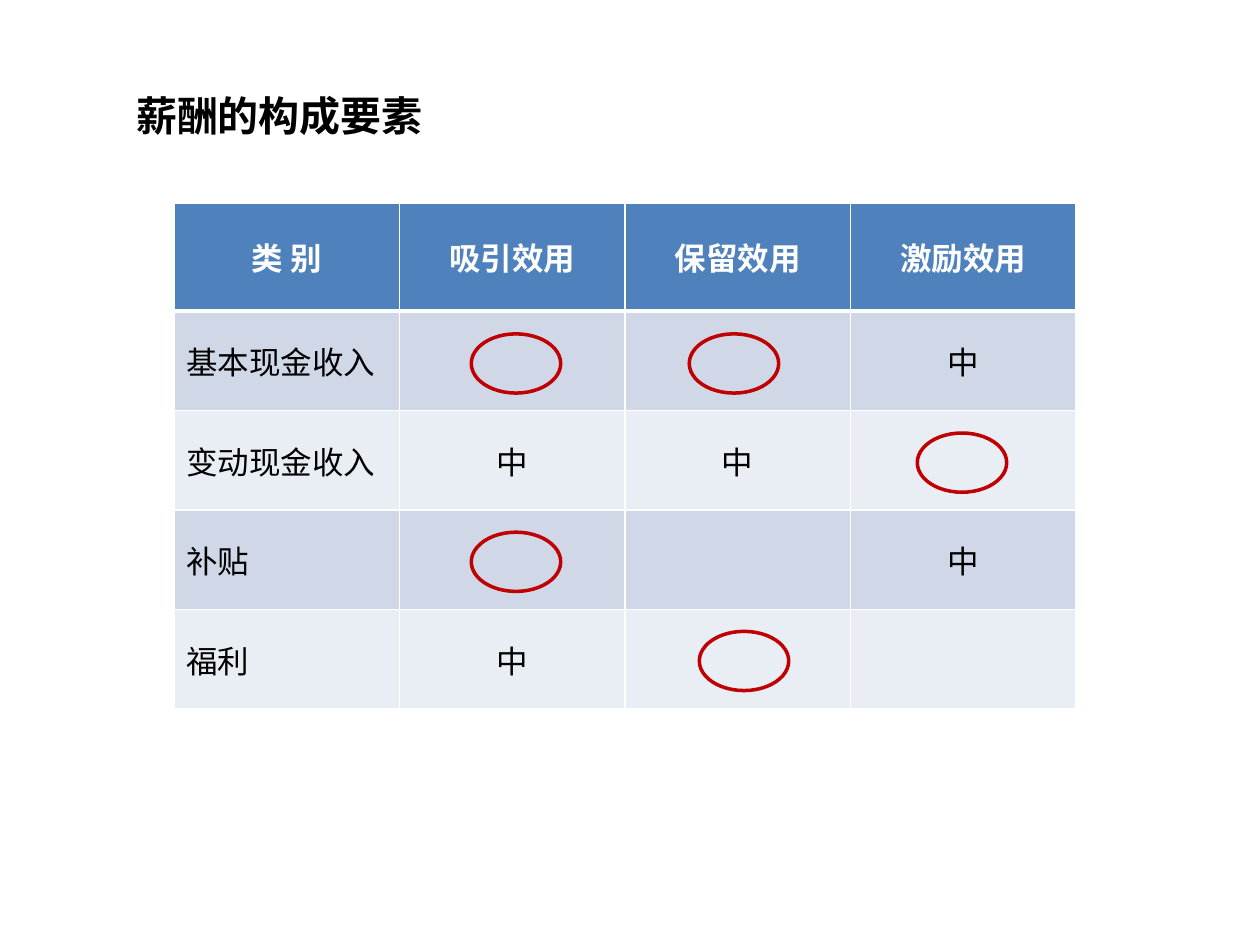
from dataclasses import dataclass

from lxml import etree
from pptx import Presentation
from pptx.dml.color import RGBColor
from pptx.enum import shapes, text
from pptx.oxml import ns
from pptx.util import Inches, Pt

FONT = "Noto Sans CJK SC"
BLACK = RGBColor(0x00, 0x00, 0x00)
WHITE = RGBColor(0xFF, 0xFF, 0xFF)
RED = RGBColor(0xC0, 0x00, 0x00)
HEADER = RGBColor(0x4F, 0x81, 0xBD)
BANDS = (RGBColor(0xD0, 0xD8, 0xE8), RGBColor(0xE9, 0xED, 0xF4))
LEFT, CENTER = text.PP_ALIGN.LEFT, text.PP_ALIGN.CENTER

ROWS = [
    ("类 别", "吸引效用", "保留效用", "激励效用"),
    ("基本现金收入", "", "", "中"),
    ("变动现金收入", "中", "中", ""),
    ("补贴", "", "", "中"),
    ("福利", "中", "", ""),
]
COLUMN_WIDTH = 1.79
HEADER_HEIGHT, ROW_HEIGHT = 0.86, 0.79


@dataclass(frozen=True)
class Mark:
    left: float
    row: int


MARKS = [Mark(3.74, 0), Mark(5.47, 0), Mark(7.28, 1), Mark(3.74, 2), Mark(5.55, 3)]


def write(tf, content: str, *, size: float = 18, color=BLACK,
          bold: bool = False, align=LEFT) -> None:
    tf.vertical_anchor = text.MSO_ANCHOR.MIDDLE
    p = tf.paragraphs[0]
    p.alignment = align
    r = p.add_run()
    r.text = content
    r.font.name = FONT
    r.font.size = Pt(size)
    r.font.bold = bold
    r.font.color.rgb = color
    etree.SubElement(r._r.get_or_add_rPr(), ns.qn("a:ea"), typeface=FONT)


def set_borders(cell, **widths: float) -> None:
    tc_pr = cell._tc.get_or_add_tcPr()
    for side, width in widths.items():
        line = etree.SubElement(tc_pr, ns.qn(f"a:ln{side}"), w=str(Pt(width)))
        fill = etree.SubElement(line, ns.qn("a:solidFill"))
        etree.SubElement(fill, ns.qn("a:srgbClr"), val=str(WHITE))


def add_effect_table(s) -> None:
    height = HEADER_HEIGHT + ROW_HEIGHT * (len(ROWS) - 1)
    columns = len(ROWS[0])
    table = s.shapes.add_table(len(ROWS), columns, Inches(1.38), Inches(1.61),
                               Inches(COLUMN_WIDTH * columns), Inches(height)).table
    for column in table.columns:
        column.width = Inches(COLUMN_WIDTH)
    for i, values in enumerate(ROWS):
        is_header = i == 0
        table.rows[i].height = Inches(HEADER_HEIGHT if is_header else ROW_HEIGHT)
        for j, value in enumerate(values):
            cell = table.cell(i, j)
            set_borders(cell, L=1, R=1, T=3 if i == 1 else 1, B=3 if is_header else 1)
            cell.fill.solid()
            cell.fill.fore_color.rgb = HEADER if is_header else BANDS[(i - 1) % 2]
            cell.vertical_anchor = text.MSO_ANCHOR.MIDDLE
            if value:
                write(cell.text_frame, value, bold=is_header,
                      color=WHITE if is_header else BLACK,
                      align=CENTER if is_header or j else LEFT)


def add_mark(s, mark: Mark) -> None:
    sp = s.shapes.add_shape(shapes.MSO_SHAPE.OVAL, Inches(mark.left),
                            Inches(2.65 + 0.787 * mark.row), Inches(0.71), Inches(0.47))
    sp.shadow.inherit = False
    sp.fill.background()
    sp.line.color.rgb = RED
    sp.line.width = Pt(2)


def main() -> None:
    prs = Presentation()
    prs.slide_width, prs.slide_height = Inches(10), Inches(7.5)
    s = prs.slides.add_slide(prs.slide_layouts[5])
    title = s.shapes.title
    title.left, title.top = Inches(0.98), Inches(0.29)
    title.width, title.height = Inches(8), Inches(1.25)
    write(title.text_frame, "薪酬的构成要素", size=23.4, bold=True)
    add_effect_table(s)
    for mark in MARKS:
        add_mark(s, mark)
    prs.save("out.pptx")


if __name__ == "__main__":
    main()
